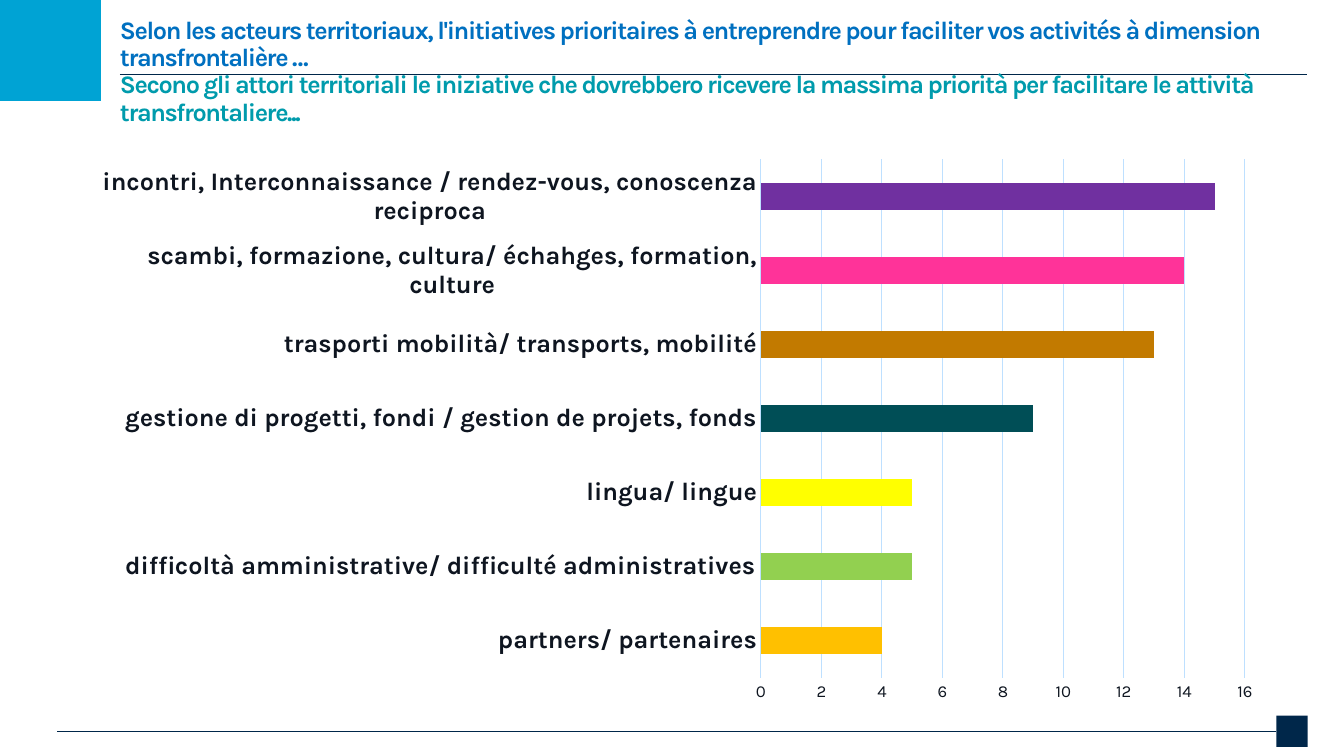
import math
from copy import deepcopy
from dataclasses import dataclass

from lxml import etree
from pptx import Presentation
from pptx.chart.data import CategoryChartData
from pptx.dml.color import RGBColor
from pptx.enum.chart import XL_CHART_TYPE, XL_TICK_MARK
from pptx.enum.shapes import MSO_CONNECTOR, MSO_SHAPE
from pptx.enum.text import MSO_ANCHOR, PP_ALIGN
from pptx.oxml import parse_xml
from pptx.oxml.ns import nsdecls, qn
from pptx.util import Inches, Pt

BAR_CLUSTERED = XL_CHART_TYPE.BAR_CLUSTERED
NO_TICK = XL_TICK_MARK.NONE
STRAIGHT = MSO_CONNECTOR.STRAIGHT
RECTANGLE = MSO_SHAPE.RECTANGLE
MIDDLE = MSO_ANCHOR.MIDDLE
LEFT = PP_ALIGN.LEFT

FONT = "Karla"
WHITE = RGBColor(0xFF, 0xFF, 0xFF)
NAVY = RGBColor(0x00, 0x27, 0x4A)
CYAN = RGBColor(0x00, 0xA3, 0xD4)
BLUE = RGBColor(0x00, 0x70, 0xC0)
TEAL = RGBColor(0x00, 0x9B, 0xAC)
INK = RGBColor(0x0E, 0x15, 0x20)
PALE_BLUE = RGBColor(0xBE, 0xE0, 0xFF)
PALE_GREY = RGBColor(0xE2, 0xE8, 0xF2)


@dataclass
class Rule:
    left: float
    right: float
    y: float


@dataclass
class TitleLine:
    text: str
    color: RGBColor


@dataclass
class Bar:
    label: str
    value: int
    color: RGBColor


RULES = [Rule(1.19, 12.96, 0.74), Rule(0.57, 12.66, 7.26)]
TITLE = [
    TitleLine("Selon les acteurs territoriaux, l'initiatives prioritaires à entreprendre "
              "pour faciliter vos activités à dimension transfrontalière …", BLUE),
    TitleLine("Secono gli attori territoriali le iniziative che dovrebbero ricevere "
              "la massima priorità per facilitare le attività transfrontaliere...", TEAL),
]
BARS = [
    Bar("partners/ partenaires", 4, RGBColor(0xFF, 0xC0, 0x00)),
    Bar("difficoltà amministrative/ difficulté administratives", 5, RGBColor(0x92, 0xD0, 0x50)),
    Bar("lingua/ lingue", 5, RGBColor(0xFF, 0xFF, 0x00)),
    Bar("gestione di progetti, fondi / gestion de projets, fonds", 9, RGBColor(0x00, 0x4E, 0x56)),
    Bar("trasporti mobilità/ transports, mobilité", 13, RGBColor(0xC2, 0x7A, 0x00)),
    Bar("scambi, formazione, cultura/ échahges, formation, culture", 14,
        RGBColor(0xFF, 0x33, 0x99)),
    Bar("incontri, Interconnaissance / rendez-vous, conoscenza reciproca", 15,
        RGBColor(0x70, 0x30, 0xA0)),
]


def fill_plain(sp, color: RGBColor) -> None:
    sp.shadow.inherit = False
    sp.fill.solid()
    sp.fill.fore_color.rgb = color
    sp.line.fill.background()


def add_rule(shapes, rule: Rule) -> None:
    line = shapes.add_connector(STRAIGHT, Inches(rule.left), Inches(rule.y),
                                Inches(rule.right), Inches(rule.y))
    line.line.color.rgb = NAVY
    line.line.width = Pt(0.5)
    etree.SubElement(line._element.spPr, qn("a:effectLst"))


def add_tab(shapes) -> None:
    """Draw the tab hanging from the top edge, with a half ellipse as its foot."""
    center, side, radius_x, radius_y, steps = 0.64, 0.6, 0.31, 0.25, 24
    foot = [(center + radius_x * math.cos(math.pi * i / steps),
             side + radius_y * math.sin(math.pi * i / steps)) for i in range(steps + 1)]
    builder = shapes.build_freeform(center + radius_x, 0, scale=Inches(1))
    builder.add_line_segments(foot + [(center - radius_x, 0)], close=True)
    fill_plain(builder.convert_to_shape(), CYAN)


def format_title(shapes) -> None:
    title = shapes.title
    shapes._spTree.append(title._element)
    title.left, title.top = Inches(1.09), Inches(0.12)
    title.width, title.height = Inches(11.88), Inches(1.19)
    tf = title.text_frame
    tf.word_wrap = True
    tf.vertical_anchor = MIDDLE
    p = tf.paragraphs[0]
    p.alignment = LEFT
    p.line_spacing = 0.9
    p.space_before = Pt(0)
    for i, line in enumerate(TITLE):
        if i:
            p.add_line_break()
            p._p[-1].append(deepcopy(r._r.rPr))
        r = p.add_run()
        r.text = line.text
        r.font.name = FONT
        r.font.size = Pt(18)
        r.font.bold = True
        r.font.color.rgb = line.color
        r._r.rPr.set("spc", "-100")


def format_axis(axis, size: int, bold: bool) -> None:
    axis.major_tick_mark = axis.minor_tick_mark = NO_TICK
    font = axis.tick_labels.font
    font.name, font.size, font.bold = FONT, Pt(size), bold
    font.color.rgb = INK


def set_line(line) -> None:
    line.color.rgb = PALE_BLUE
    line.width = Pt(0.75)


def place_plot(chart) -> None:
    """Fix the inner plot area as fractions of the chart frame."""
    area = chart._chartSpace.chart.plotArea
    for old in area.findall(qn("c:layout")):
        area.remove(old)
    places = "".join(f'<c:{tag} val="{value}"/>' for tag, value in
                     [("x", 0.568), ("y", 0.02), ("w", 0.404), ("h", 0.918)])
    area.insert(0, parse_xml(
        f'<c:layout {nsdecls("c")}><c:manualLayout><c:layoutTarget val="inner"/>'
        f'<c:xMode val="edge"/><c:yMode val="edge"/>{places}</c:manualLayout></c:layout>'))


def add_priorities_chart(shapes) -> None:
    data = CategoryChartData()
    data.categories = [bar.label for bar in BARS]
    data.add_series("Series 1", [bar.value for bar in BARS])
    chart = shapes.add_chart(BAR_CLUSTERED, Inches(0.8), Inches(1.47),
                             Inches(11.88), Inches(5.6), data).chart
    chart.has_legend = False
    chart.has_title = False
    chart.font.name, chart.font.size = FONT, Pt(10)
    chart.font.color.rgb = NAVY

    format_axis(chart.category_axis, 18, True)
    set_line(chart.category_axis.format.line)
    values = chart.value_axis
    format_axis(values, 12, False)
    values.minimum_scale, values.maximum_scale, values.major_unit = 0, 16, 2
    values.format.line.fill.background()
    values.has_major_gridlines = True
    set_line(values.major_gridlines.format.line)

    plot = chart.plots[0]
    plot.gap_width = 182
    plot.vary_by_categories = False
    series = plot.series[0]
    series.format.fill.solid()
    series.format.fill.fore_color.rgb = PALE_GREY
    for i, bar in enumerate(BARS):
        fill = series.points[i].format.fill
        fill.solid()
        fill.fore_color.rgb = bar.color
    place_plot(chart)


def main() -> None:
    prs = Presentation()
    prs.slide_width, prs.slide_height = Inches(13.33), Inches(7.5)
    s = prs.slides.add_slide(prs.slide_layouts[5])
    s.background.fill.solid()
    s.background.fill.fore_color.rgb = WHITE
    corner = s.shapes.add_shape(RECTANGLE, Inches(12.66), Inches(7.1),
                                Inches(0.31), Inches(0.31))
    fill_plain(corner, NAVY)
    add_tab(s.shapes)
    for rule in RULES:
        add_rule(s.shapes, rule)
    format_title(s.shapes)
    add_priorities_chart(s.shapes)
    prs.save("out.pptx")


if __name__ == "__main__":
    main()
